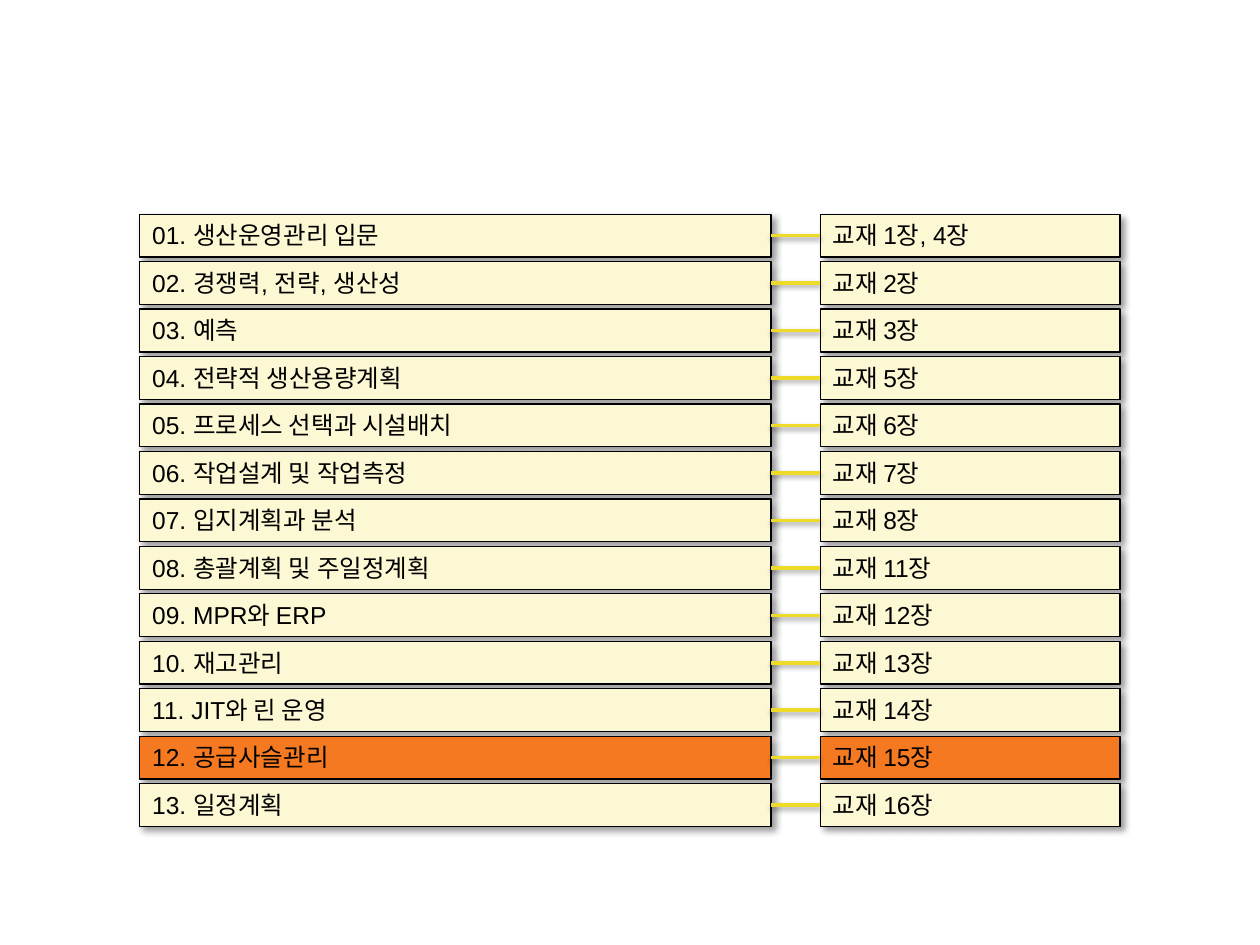
from dataclasses import dataclass

from lxml.etree import SubElement
from pptx import Presentation
from pptx.dml.color import RGBColor
from pptx.enum.shapes import MSO_CONNECTOR, MSO_SHAPE
from pptx.enum.text import MSO_ANCHOR, MSO_AUTO_SIZE, PP_ALIGN
from pptx.oxml.ns import qn
from pptx.shapes.autoshape import Shape
from pptx.shapes.connector import Connector
from pptx.slide import Slide
from pptx.util import Inches, Pt

CREAM = RGBColor(0xFC, 0xF8, 0xD4)
ORANGE = RGBColor(0xF4, 0x79, 0x21)
YELLOW = RGBColor(0xEE, 0xDB, 0x28)
BLACK = RGBColor(0x00, 0x00, 0x00)

FIRST_TOP, LAST_TOP = 1.7, 6.22
BOX_HEIGHT = 0.34


@dataclass(frozen=True)
class Lesson:
    topic: str
    chapters: str
    current: bool = False


@dataclass(frozen=True)
class Column:
    left: float
    width: float


@dataclass(frozen=True)
class Shadow:
    opacity: int
    blur: float
    distance: float
    angle: int


TOPIC_COLUMN = Column(1.11, 5.01)
CHAPTER_COLUMN = Column(6.51, 2.38)
BOX_SHADOW = Shadow(40, 4, 3, 45)
LINK_SHADOW = Shadow(38, 3.1, 1.6, 90)

LESSONS = [
    Lesson("생산운영관리 입문", "1장, 4장"),
    Lesson("경쟁력, 전략, 생산성", "2장"),
    Lesson("예측", "3장"),
    Lesson("전략적 생산용량계획", "5장"),
    Lesson("프로세스 선택과 시설배치", "6장"),
    Lesson("작업설계 및 작업측정", "7장"),
    Lesson("입지계획과 분석", "8장"),
    Lesson("총괄계획 및 주일정계획", "11장"),
    Lesson("MPR와 ERP", "12장"),
    Lesson("재고관리", "13장"),
    Lesson("JIT와 린 운영", "14장"),
    Lesson("공급사슬관리", "15장", current=True),
    Lesson("일정계획", "16장"),
]
ROW_PITCH = (LAST_TOP - FIRST_TOP) / (len(LESSONS) - 1)


def add_shadow(shape: Shape | Connector, shadow: Shadow) -> None:
    effects = SubElement(shape._element.spPr, qn("a:effectLst"))
    outer = SubElement(
        effects,
        qn("a:outerShdw"),
        blurRad=str(Pt(shadow.blur)),
        dist=str(Pt(shadow.distance)),
        dir=str(shadow.angle * 60000),
        algn="ctr",
        rotWithShape="0",
    )
    color = SubElement(outer, qn("a:srgbClr"), val=str(BLACK))
    SubElement(color, qn("a:alpha"), val=str(shadow.opacity * 1000))


def add_box(slide: Slide, column: Column, row: int, text: str, fill: RGBColor) -> Shape:
    box = slide.shapes.add_shape(
        MSO_SHAPE.RECTANGLE,
        Inches(column.left),
        Inches(FIRST_TOP + row * ROW_PITCH),
        Inches(column.width),
        Inches(BOX_HEIGHT),
    )
    box.fill.solid()
    box.fill.fore_color.rgb = fill
    box.line.color.rgb = BLACK
    box.line.width = Pt(0.75)
    add_shadow(box, BOX_SHADOW)
    frame = box.text_frame
    frame.word_wrap = True
    frame.auto_size = MSO_AUTO_SIZE.SHAPE_TO_FIT_TEXT
    frame.vertical_anchor = MSO_ANCHOR.TOP
    para = frame.paragraphs[0]
    para.text = text
    para.alignment = PP_ALIGN.LEFT
    para.font.name = "Arial"
    para.font.size = Pt(14)
    para.font.color.rgb = BLACK
    return box


def add_link(slide: Slide, topic_box: Shape, chapter_box: Shape) -> None:
    link = slide.shapes.add_connector(MSO_CONNECTOR.STRAIGHT, 0, 0, 0, 0)
    link.begin_connect(topic_box, 3)
    link.end_connect(chapter_box, 1)
    link.line.color.rgb = YELLOW
    link.line.width = Pt(2)
    add_shadow(link, LINK_SHADOW)


def main() -> None:
    deck = Presentation()
    deck.slide_width = Inches(10)
    deck.slide_height = Inches(7.5)
    page = deck.slides.add_slide(deck.slide_layouts[6])

    fills = [ORANGE if lesson.current else CREAM for lesson in LESSONS]
    topic_boxes = [
        add_box(page, TOPIC_COLUMN, row, f"{row + 1:02}. {lesson.topic}", fills[row])
        for row, lesson in enumerate(LESSONS)
    ]
    chapter_boxes = [
        add_box(page, CHAPTER_COLUMN, row, f"교재 {lesson.chapters}", fills[row])
        for row, lesson in enumerate(LESSONS)
    ]
    for topic_box, chapter_box in zip(topic_boxes, chapter_boxes):
        add_link(page, topic_box, chapter_box)

    deck.save("out.pptx")


if __name__ == "__main__":
    main()
